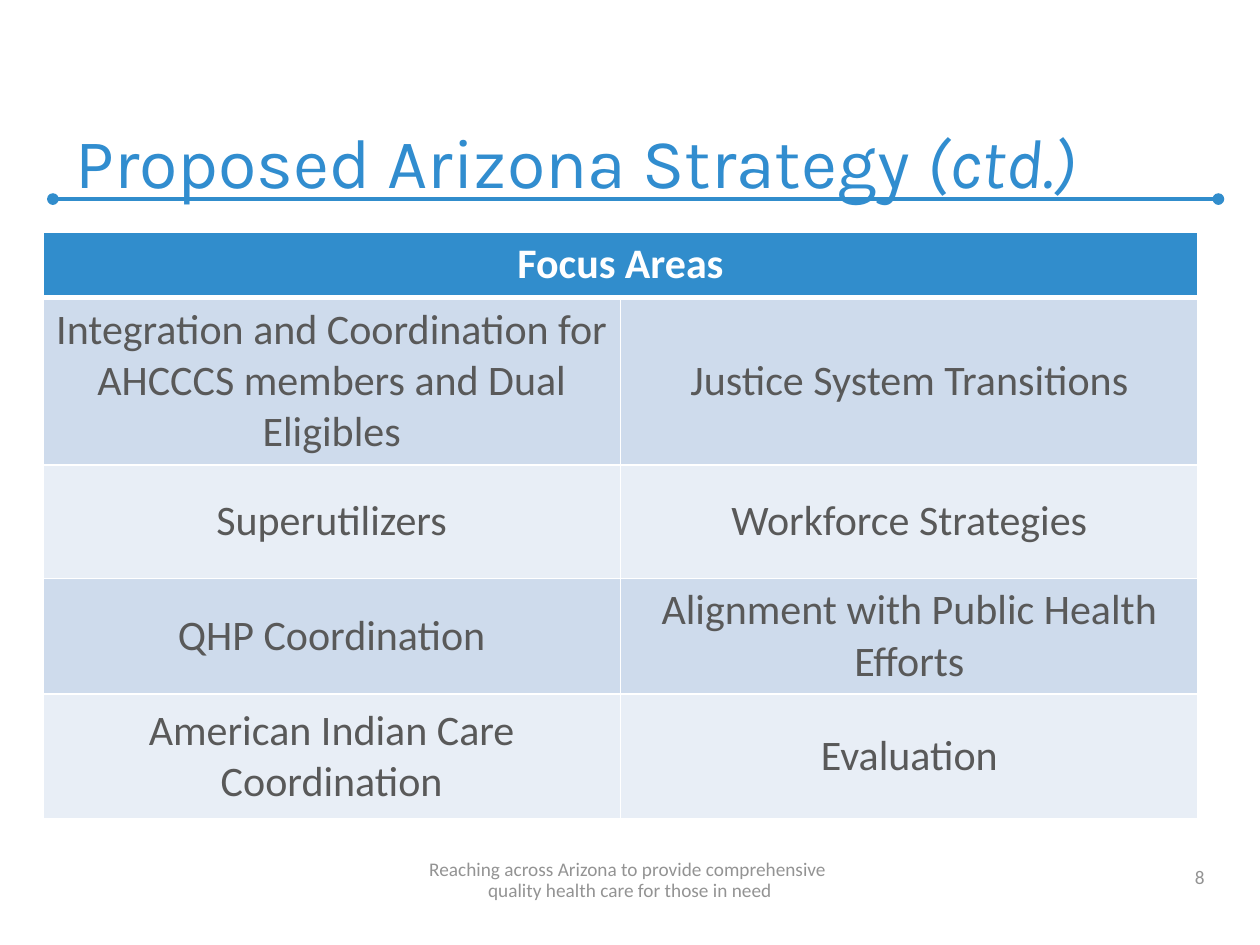
"""Build the Proposed Arizona Strategy slide with its table of focus areas."""
from dataclasses import dataclass

from lxml import etree
from pptx import Presentation
from pptx.dml.color import RGBColor
from pptx.enum.shapes import MSO_CONNECTOR
from pptx.enum.text import MSO_ANCHOR, PP_ALIGN
from pptx.oxml import parse_xml
from pptx.oxml.ns import nsdecls, qn
from pptx.util import Inches, Pt

STRAIGHT = MSO_CONNECTOR.STRAIGHT
MIDDLE, BOTTOM = MSO_ANCHOR.MIDDLE, MSO_ANCHOR.BOTTOM
LEFT, CENTER, RIGHT = PP_ALIGN.LEFT, PP_ALIGN.CENTER, PP_ALIGN.RIGHT


@dataclass(frozen=True)
class Theme:
    title_color: str = "318DCF"
    accent: str = "318DCC"
    white: str = "FFFFFF"
    body: str = "595959"
    muted: str = "939393"
    bands: tuple = ("CEDBEC", "E8EEF6")
    title_font: str = "Karla"
    body_font: str = "Calibri"
    title_size: int = 40
    table_size: int = 24
    footer_size: int = 11


@dataclass(frozen=True)
class FocusRow:
    height: float
    left: str
    right: str


@dataclass(frozen=True)
class Footer:
    text: str
    box: tuple
    align: PP_ALIGN
    line_spacing: float | None = None


THEME = Theme()
HEADER_HEIGHT = 0.52
TABLE_WIDTH = 9.17
FOCUS_ROWS = [
    FocusRow(1.33, "Integration and Coordination for AHCCCS members and Dual Eligibles",
             "Justice System Transitions"),
    FocusRow(0.9, "Superutilizers", "Workforce Strategies"),
    FocusRow(0.92, "QHP Coordination", "Alignment with Public Health Efforts"),
    FocusRow(0.99, "American Indian Care Coordination", "Evaluation"),
]
FOOTERS = [
    Footer("8", (7.33, 6.78, 2.33, 0.32), RIGHT),
    Footer("Reaching across Arizona to provide comprehensive \v"
           "quality health care for those in need", (0, 6.78, 10, 0.42), CENTER, 12),
]


def write(frame, *texts: str, size: float, color: str, font: str = THEME.body_font,
          align: PP_ALIGN = CENTER, bold: bool = False, italic_last: bool = False,
          line_spacing: float | None = None) -> None:
    """Write texts as the runs of one formatted paragraph."""
    para = frame.paragraphs[0]
    para.text = texts[0]
    para.alignment = align
    if line_spacing:
        para.line_spacing = Pt(line_spacing)
    for text in texts[1:]:
        para.add_run().text = text
    for span in para.runs:
        span.font.name = font
        span.font.size = Pt(size)
        span.font.bold = bold
        span.font.color.rgb = RGBColor.from_string(color)
    if italic_last:
        para.runs[-1].font.italic = True


def add_title(slide) -> None:
    """Place and format the title placeholder."""
    title = slide.shapes.title
    title.left, title.top, title.width, title.height = map(Inches, (0.5, 0.33, 9, 1.33))
    title.text_frame.vertical_anchor = BOTTOM
    write(title.text_frame, "Proposed Arizona Strategy ", "(ctd.)", size=THEME.title_size,
          color=THEME.title_color, font=THEME.title_font, align=LEFT, italic_last=True)


def add_title_rule(slide) -> None:
    """Draw the rule with round ends beneath the title."""
    rule = slide.shapes.add_connector(STRAIGHT, *map(Inches, (0.42, 1.58, 9.67, 1.58)))
    rule.line.color.rgb = RGBColor.from_string(THEME.accent)
    rule.line.width = Pt(2.25)
    for end in ("a:headEnd", "a:tailEnd"):
        etree.SubElement(rule.line._get_or_add_ln(), qn(end), type="oval")
    etree.SubElement(rule._element.spPr, qn("a:effectLst"))


def style_cell(cell, fill: str, top: float = 1, bottom: float = 1) -> None:
    """Give a cell white borders, a fill and middle anchoring."""
    properties = cell._tc.get_or_add_tcPr()
    for side, width in (("L", 1), ("R", 1), ("T", top), ("B", bottom)):
        properties.append(parse_xml(
            f'<a:ln{side} {nsdecls("a")} w="{Pt(width)}"><a:solidFill>'
            f'<a:srgbClr val="{THEME.white}"/></a:solidFill></a:ln{side}>'))
    cell.fill.solid()
    cell.fill.fore_color.rgb = RGBColor.from_string(fill)
    cell.vertical_anchor = MIDDLE


def add_focus_table(slide) -> None:
    """Add the table of focus areas with its merged header."""
    heights = [HEADER_HEIGHT, *(row.height for row in FOCUS_ROWS)]
    table = slide.shapes.add_table(
        len(heights), 2, *map(Inches, (0.34, 1.84, TABLE_WIDTH, sum(heights)))).table
    for column in table.columns:
        column.width = Inches(TABLE_WIDTH / 2)
    for row, height in zip(table.rows, heights):
        row.height = Inches(height)
    for cell in table.rows[0].cells:
        style_cell(cell, THEME.accent, bottom=3)
    header = table.cell(0, 0)
    header.merge(table.cell(0, 1))
    write(header.text_frame, "Focus Areas", size=THEME.table_size, color=THEME.white, bold=True)
    for index, focus in enumerate(FOCUS_ROWS):
        for cell, text in zip(table.rows[index + 1].cells, (focus.left, focus.right)):
            style_cell(cell, THEME.bands[index % 2], top=1 if index else 3)
            write(cell.text_frame, text, size=THEME.table_size, color=THEME.body)


def add_footer(slide, footer: Footer) -> None:
    """Add one muted text box at the foot of the slide."""
    frame = slide.shapes.add_textbox(*map(Inches, footer.box)).text_frame
    frame.word_wrap = True
    frame.vertical_anchor = BOTTOM
    write(frame, footer.text, size=THEME.footer_size, color=THEME.muted,
          align=footer.align, line_spacing=footer.line_spacing)


def main() -> None:
    """Build and save the deck."""
    deck = Presentation()
    deck.slide_width, deck.slide_height = Inches(10), Inches(7.5)
    slide = deck.slides.add_slide(deck.slide_layouts[5])
    add_title_rule(slide)
    add_title(slide)
    add_focus_table(slide)
    for footer in FOOTERS:
        add_footer(slide, footer)
    deck.save("out.pptx")


if __name__ == "__main__":
    main()
